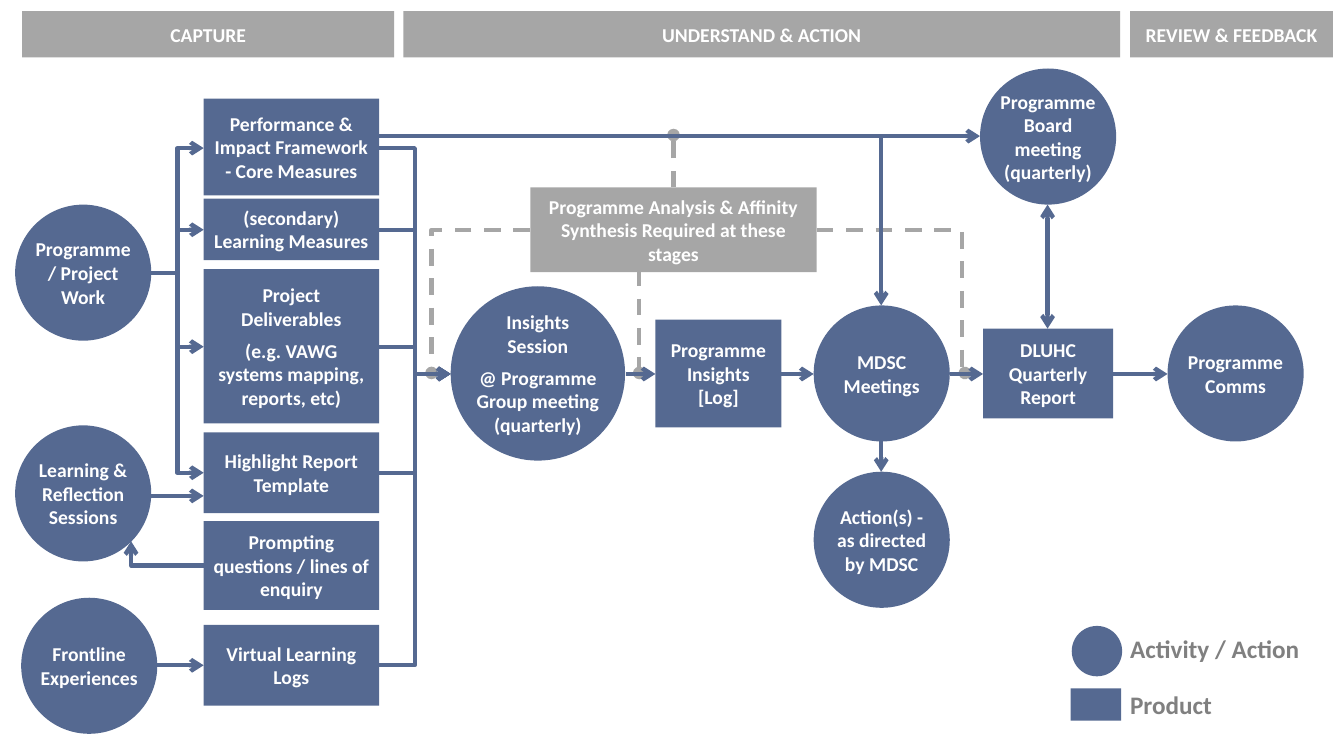
"""Build the programme insight flow slide: capture, understand and act, review."""
from lxml.etree import SubElement
from pptx import Presentation
from pptx.dml.color import RGBColor
from pptx.enum.shapes import MSO_CONNECTOR, MSO_SHAPE
from pptx.enum.text import MSO_ANCHOR, PP_ALIGN
from pptx.oxml.ns import qn
from pptx.util import Inches, Pt

HUES = {"blue": "556991", "grey": "A6A6A6", "white": "FFFFFF", "label": "808080"}
FONT = "Calibri"
BOX, DISC = MSO_SHAPE.RECTANGLE, MSO_SHAPE.OVAL

deck = Presentation()
deck.slide_width, deck.slide_height = Inches(13.33), Inches(7.5)
slide = deck.slides.add_slide(deck.slide_layouts[6])


def add_wire(start, end, kind="line", hue="blue", tail="arrow", head=None, bend=None):
    """Draw a straight or bent connector; corner turns once, step turns twice."""
    style = MSO_CONNECTOR.STRAIGHT if kind == "line" else MSO_CONNECTOR.ELBOW
    wire = slide.shapes.add_connector(style, *map(Inches, start + end))
    wire.line.color.rgb = RGBColor.from_string(HUES[hue])
    wire.line.width = Pt(3)
    props = wire._element.spPr
    shape = props.find(qn("a:prstGeom"))
    if kind == "corner":
        shape.set("prst", "bentConnector2")
    if bend:
        guide = SubElement(shape.find(qn("a:avLst")), qn("a:gd"))
        guide.set("name", "adj1")
        guide.set("fmla", f"val {bend}")
    edge = wire.line._get_or_add_ln()
    if hue == "grey":
        SubElement(edge, qn("a:prstDash")).set("val", "dash")
    for tag, end_type in (("a:headEnd", head), ("a:tailEnd", tail)):
        if end_type:
            SubElement(edge, qn(tag)).set("type", end_type)
    SubElement(props, qn("a:effectLst"))


def add_node(kind, left, top, wide, high, lines=(), hue="blue", gap=6, wrap=True):
    """Draw a filled shape with bold centred text, one paragraph a line."""
    node = slide.shapes.add_shape(kind, *map(Inches, (left, top, wide, high)))
    node.shadow.inherit = False
    node.fill.solid()
    node.fill.fore_color.rgb = RGBColor.from_string(HUES[hue])
    node.line.fill.background()
    frame = node.text_frame
    frame.word_wrap = wrap
    frame.vertical_anchor = MSO_ANCHOR.MIDDLE
    if kind == DISC:
        frame.margin_left = frame.margin_right = 0
        frame.margin_top = frame.margin_bottom = 0
    for i, line in enumerate(lines):
        para = frame.add_paragraph() if i else frame.paragraphs[0]
        para.text = line
        para.alignment = PP_ALIGN.CENTER
        para.space_before = Pt(gap if i else 0)
        para.font.name, para.font.size, para.font.bold = FONT, Pt(14), True
        para.font.color.rgb = RGBColor.from_string(HUES["white"])


MID = 3.71
add_wire((6.34, 2.67), (6.34, 3.7), hue="grey", tail="oval")
add_wire((8.1, 2.28), (9.57, 3.7), "step", "grey", "oval", bend=97900)
add_wire((6.68, 1.86), (6.68, 1.34), hue="grey", tail="oval")
add_wire((5.26, 2.28), (4.28, 3.7), "corner", "grey", "oval")

for y in (1.47, 2.28, 3.44, 4.69):
    add_wire((1.5, 2.71), (2.02, y), "step")
for y in (1.47, 2.28, 3.44, 4.69, 6.6):
    add_wire((3.76, y), (4.47, MID), "step")
for left, right in ((6.21, 6.5), (7.75, 8.07), (9.42, 9.75), (11.04, 11.58)):
    add_wire((left, MID), (right, MID))
add_wire((1.5, 4.92), (2.02, 4.92))
add_wire((1.56, 6.6), (2.02, 6.6))
add_wire((2.02, 5.61), (1.3, 5.37), "corner")
add_wire((3.5, 1.35), (9.72, 1.35))
add_wire((3.5, 1.35), (8.74, 3.03), "corner")
add_wire((8.74, 4.38), (8.74, 4.68))
add_wire((10.39, 3.26), (10.39, 2.03), head="arrow")

for left, wide, name in (
    (0.22, 3.69, "CAPTURE"),
    (4, 7.11, "UNDERSTAND & ACTION"),
    (11.21, 2.01, "REVIEW & FEEDBACK"),
):
    add_node(BOX, left, 0.11, wide, 0.46, [name], "grey")

for top, high, *lines in (
    (0.98, 0.96, "Performance & Impact Framework - Core Measures"),
    (1.97, 0.61, "(secondary) Learning Measures"),
    (2.67, 1.53, "Project Deliverables", "(e.g. VAWG systems mapping, reports, etc)"),
    (4.29, 0.8, "Highlight Report Template"),
    (5.17, 0.88, "Prompting questions / lines of enquiry"),
    (6.2, 0.8, "Virtual Learning Logs"),
):
    add_node(BOX, 2.02, top, 1.74, high, lines)

add_node(BOX, 5.26, 1.86, 2.84, 0.84,
         ["Programme Analysis & Affinity Synthesis Required at these stages"], "grey")
add_node(BOX, 6.5, 3.17, 1.25, 1.07, ["Programme Insights [Log]"])
add_node(BOX, 9.75, 3.26, 1.29, 0.89, ["DLUHC Quarterly Report"])
add_node(DISC, 4.47, 2.84, 1.73, 1.73,
         ["Insights Session", "@ Programme Group meeting (quarterly)"])

for left, top, *lines in (
    (0.15, 2.03, "Programme/ Project Work"),
    (0.15, 4.22, "Learning & Reflection Sessions"),
    (0.21, 5.93, "Frontline", "Experiences"),
    (8.07, 3.03, "MDSC", "Meetings"),
    (8.07, 4.68, "Action(s) - as directed by MDSC"),
    (9.72, 0.68, "Programme", "Board", "meeting", "(quarterly)"),
    (11.58, 3.03, "Programme", "Comms"),
):
    add_node(DISC, left, top, 1.35, 1.35, lines, gap=0, wrap=len(lines) == 1)

add_node(DISC, 10.63, 6.21, 0.5, 0.5)
add_node(BOX, 10.62, 6.83, 0.5, 0.32)
for top, name in ((6.23, "Activity / Action"), (6.79, "Product")):
    label = slide.shapes.add_textbox(*map(Inches, (11.11, top, 2.01, 0.4)))
    label.text_frame.word_wrap = True
    para = label.text_frame.paragraphs[0]
    para.text = name
    para.font.name, para.font.size, para.font.bold = FONT, Pt(18), True
    para.font.color.rgb = RGBColor.from_string(HUES["label"])

deck.save("out.pptx")
